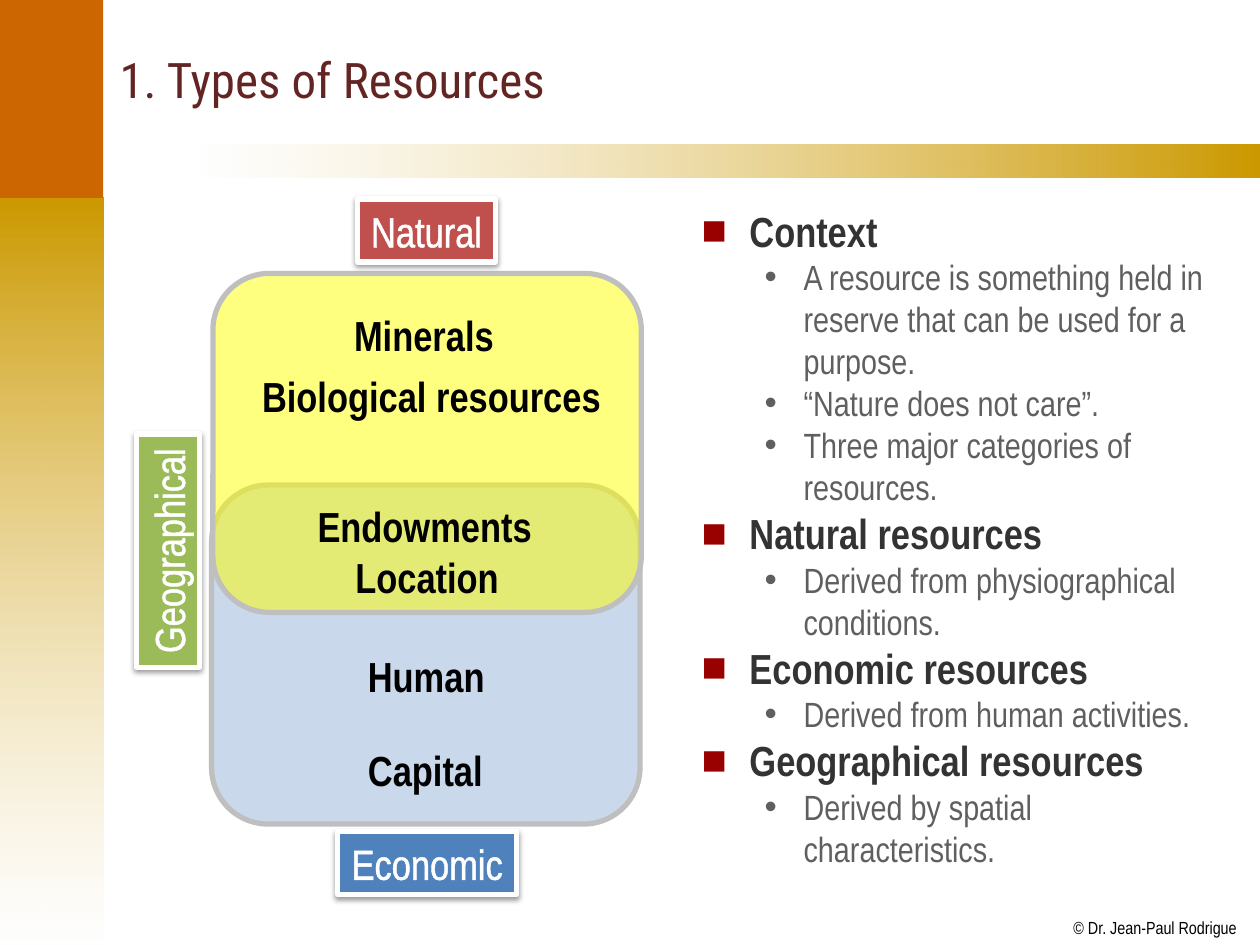
from lxml import etree
from pptx import Presentation
from pptx import util as u
from pptx.dml.color import RGBColor
from pptx.enum import shapes, text
from pptx.oxml.ns import qn

COLORS = {
    "gold": "CC9900", "orange": "CC6600", "white": "FFFFFF", "black": "000000",
    "title": "632523", "heading": "333333", "detail": "5F5F5F", "bullet": "990000",
    "border": "BFBFBF", "yellow": "FFFF00", "pale_blue": "95B3D7",
    "red": "C0504D", "blue": "4F81BD", "green": "9BBB59",
}
NARROW = "Arial Narrow"
FORMATS = {
    "title": {"name": "Roboto Condensed", "size": u.Pt(28), "color": "title"},
    "heading": {"name": NARROW, "size": u.Pt(24), "bold": True, "color": "heading"},
    "detail": {"name": NARROW, "size": u.Pt(20), "bold": False, "color": "detail"},
    "item": {"name": NARROW, "size": u.Pt(24), "bold": True, "color": "black"},
    "label": {"name": NARROW, "size": u.Pt(24), "color": "white"},
    "credit": {"name": NARROW, "size": u.Pt(10), "color": "black"},
}
OUTLINE = [
    ("Context", ["A resource is something held in reserve that can be used for a purpose.",
                 "“Nature does not care”.",
                 "Three major categories of resources."]),
    ("Natural resources", ["Derived from physiographical conditions."]),
    ("Economic resources", ["Derived from human activities."]),
    ("Geographical resources", ["Derived by spatial characteristics."]),
]
# Left, top, width, height relative to the diagram
ITEMS = [
    ("Minerals", (1.96, 0.88, 1.12, 0.4)),
    ("Biological resources", (1.23, 1.36, 2.72, 0.4)),
    ("Endowments", (1.67, 2.39, 1.72, 0.4)),
    ("Location", (1.97, 2.8, 1.15, 0.4)),
    ("Human", (2.07, 3.58, 0.94, 0.4)),
    ("Capital", (2.07, 4.33, 0.92, 0.4)),
]
LABELS = [
    ("Natural", "red", (1.99, 0, 1.09, 0.5), 0),
    ("Economic", "blue", (1.83, 5.02, 1.42, 0.5), 0),
    ("Geographical", "green", (-0.44, 2.54, 1.85, 0.5), 270),
]


def rgb(name):
    return RGBColor.from_string(COLORS[name])


def add_xml(parent, tag, **attributes):
    return etree.SubElement(parent, qn(tag), attributes)


def set_alpha(color_parent, percent):
    color = next(color_parent.iter(qn("a:srgbClr")))
    add_xml(color, "a:alpha", val=str(percent * 1000))


def format_font(font, style):
    for attribute, value in FORMATS[style].items():
        if attribute == "color":
            font.color.rgb = rgb(value)
        else:
            setattr(font, attribute, value)


def add_box(slide, box, kind=shapes.MSO_SHAPE.RECTANGLE):
    shape = slide.shapes.add_shape(kind, *map(u.Inches, box))
    shape.shadow.inherit = False
    shape.line.fill.background()
    return shape


def set_line(shape, color):
    shape.line.color.rgb = rgb(color)
    shape.line.width = u.Pt(3)


def add_text(slide, box, content, style, tight=True):
    shape = slide.shapes.add_textbox(*map(u.Inches, box))
    frame = shape.text_frame
    frame.word_wrap = not tight
    if tight:
        for side in ("left", "top", "right", "bottom"):
            setattr(frame, "margin_" + side, 0)
    run = frame.paragraphs[0].add_run()
    run.text = content
    format_font(run.font, style)
    return frame


def add_gradient(slide, box, stops, angle):
    fill = add_box(slide, box).fill
    fill.gradient()
    fill.gradient_angle = angle
    for stop, (color, alpha) in zip(fill.gradient_stops, stops):
        stop.color.rgb = rgb(color)
    for element, (color, alpha) in zip(fill._xPr.iter(qn("a:gs")), stops):
        if alpha < 100:
            set_alpha(element, alpha)


def add_frame(slide, width, height):
    """Side bar, header band and credit line."""
    side, corner = 0.83, 1.58
    add_gradient(slide, (-0.01, corner - 0.01, side, height - corner + 0.01),
                 [("gold", 100), ("white", 51)], 270)
    add_gradient(slide, (1.57, 1.15, width - 1.57, 0.26),
                 [("white", 50), ("gold", 100)], 0)
    block = add_box(slide, (-0.01, -0.01, side, corner))
    block.fill.solid()
    block.fill.fore_color.rgb = rgb("orange")
    add_text(slide, (width - 1.48, height - 0.22, 1.3, 0.17),
             "© Dr. Jean-Paul Rodrigue", "credit")


def add_label(slide, content, color, box, rotation):
    label = add_box(slide, box)
    label.rotation = rotation
    label.fill.solid()
    label.fill.fore_color.rgb = rgb(color)
    set_line(label, "white")
    # Soft shadow below the label
    effects = label._element.spPr.find(qn("a:effectLst"))
    shadow = add_xml(effects, "a:outerShdw", blurRad=str(u.Pt(3.1)),
                     dist=str(u.Pt(1.6)), dir="5400000", rotWithShape="0")
    add_xml(shadow, "a:srgbClr", val=COLORS["black"])
    set_alpha(shadow, 38)
    frame = label.text_frame
    frame.word_wrap = False
    paragraph = frame.paragraphs[0]
    paragraph.alignment = text.PP_ALIGN.CENTER
    run = paragraph.add_run()
    run.text = content
    format_font(run.font, "label")
    # Outline of the letters
    properties = run._r.get_or_add_rPr()
    outline = etree.Element(qn("a:ln"), w=str(u.Pt(1.45)))
    add_xml(add_xml(outline, "a:solidFill"), "a:srgbClr", val=COLORS["white"])
    properties.insert(0, outline)


def add_diagram(slide, left, top):
    """Overlapping resource groups with their items and labels."""
    def place(box):
        return (left + box[0], top + box[1], *box[2:])

    for color, box in (("pale_blue", (0.83, 2.27, 3.4, 2.69)),
                       ("yellow", (0.84, 0.59, 3.4, 2.69))):
        group = add_box(slide, place(box), shapes.MSO_SHAPE.ROUNDED_RECTANGLE)
        group.fill.solid()
        group.fill.fore_color.rgb = rgb(color)
        set_alpha(group._element.spPr.find(qn("a:solidFill")), 50)
        set_line(group, "border")
    for content, box in ITEMS:
        add_text(slide, place(box), content, "item")
    for content, color, box, rotation in LABELS:
        add_label(slide, content, color, place(box), rotation)


def add_outline(slide, box):
    """Bulleted headings with their details."""
    frame = slide.shapes.add_textbox(*map(u.Inches, box)).text_frame
    frame.word_wrap = True
    lines = [line for heading, details in OUTLINE
             for line in [(heading, "heading"), *((d, "detail") for d in details)]]
    for index, (content, style) in enumerate(lines):
        paragraph = frame.add_paragraph() if index else frame.paragraphs[0]
        is_heading = style == "heading"
        margin, indent, mark = (0.38, -0.38, "■") if is_heading else (0.81, -0.31, "•")
        properties = paragraph._p.get_or_add_pPr()
        properties.set("marL", str(u.Inches(margin)))
        properties.set("indent", str(u.Inches(indent)))
        if is_heading:
            color = add_xml(properties, "a:buClr")
            add_xml(color, "a:srgbClr", val=COLORS["bullet"])
        else:
            paragraph.level = 1
        add_xml(properties, "a:buFont", typeface="Arial")
        add_xml(properties, "a:buChar", char=mark)
        run = paragraph.add_run()
        run.text = content
        format_font(run.font, style)


def main():
    presentation = Presentation()
    width, height = 10, 7.5
    presentation.slide_width = u.Inches(width)
    presentation.slide_height = u.Inches(height)
    slide = presentation.slides.add_slide(presentation.slide_layouts[6])
    add_frame(slide, width, height)
    title = add_text(slide, (0.85, 0.11, 8.98, 1.04), "1. Types of Resources", "title", False)
    title.vertical_anchor = text.MSO_ANCHOR.MIDDLE
    add_diagram(slide, 0.85, 1.58)
    add_outline(slide, (5.47, 1.58, 4.37, 5.62))
    presentation.save("out.pptx")


if __name__ == "__main__":
    main()
